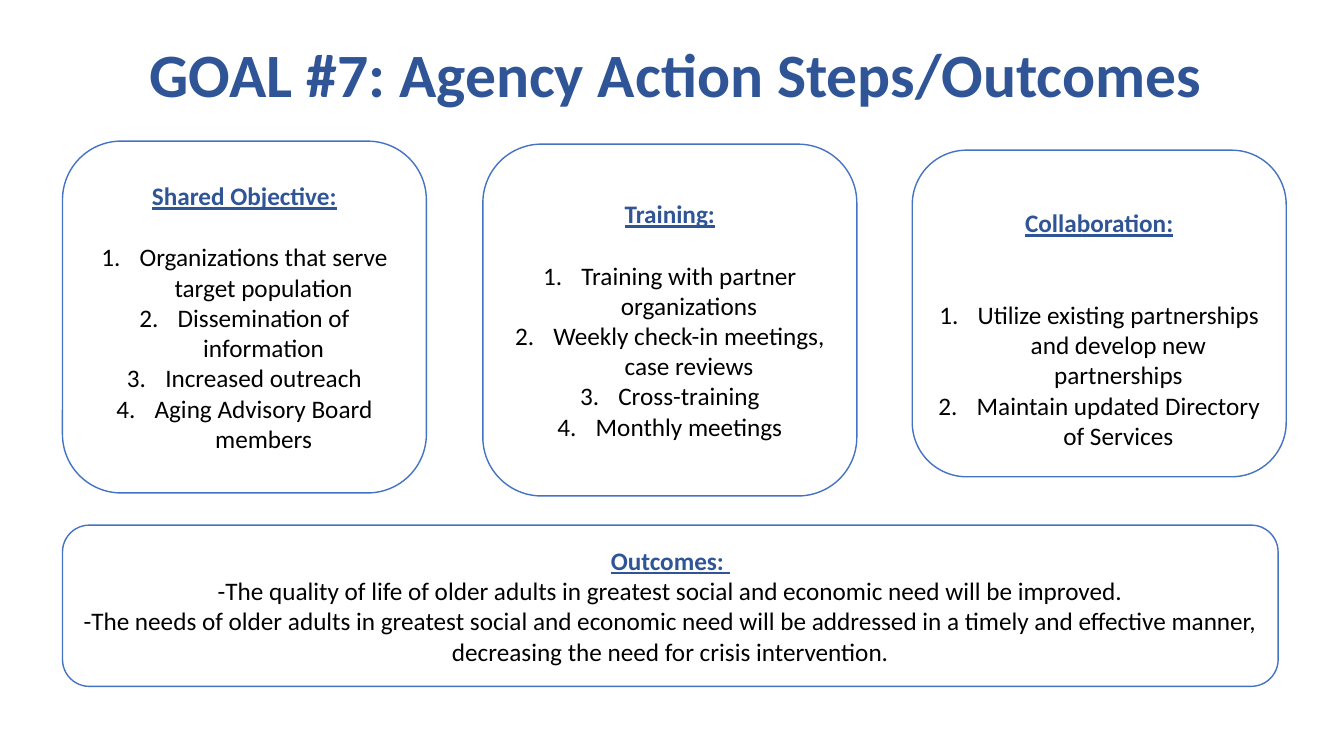
"""Build the Goal #7 slide: a title, three action cards and an outcomes panel."""
from lxml import etree
from pptx import Presentation
from pptx import util as u
from pptx.dml.color import RGBColor
from pptx.enum import shapes, text
from pptx.oxml.ns import qn

NAVY, BLUE, BLACK, WHITE = "2F5597", "4472C4", "000000", "FFFFFF"
COLUMNS, ROWS = 80, 45
LINE = 22
HEADING = {"size": u.Pt(18), "bold": True, "underline": True}
BODY = {"size": u.Pt(18), "bold": False, "underline": False}
TITLE = {"size": u.Pt(44), "bold": True}


def color(value):
    return RGBColor.from_string(value)


def write(para, words, style, ink):
    para.alignment = text.PP_ALIGN.CENTER
    span = para.add_run()
    span.text = words
    for name, value in {"name": "Calibri", **style}.items():
        setattr(span.font, name, value)
    span.font.color.rgb = color(ink)


deck = Presentation()
deck.slide_width, deck.slide_height = u.Inches(13.33), u.Inches(7.5)
column, row = deck.slide_width / COLUMNS, deck.slide_height / ROWS
page = deck.slides.add_slide(deck.slide_layouts[6])

title = page.shapes.add_textbox(*(round(n) for n in (3.78 * column, 0, 73.74 * column, 9.18 * row)))
title.text_frame.word_wrap = True
title.text_frame.vertical_anchor = text.MSO_ANCHOR.MIDDLE
title.text_frame.paragraphs[0].line_spacing = 0.9
write(title.text_frame.paragraphs[0], "GOAL #7: Agency Action Steps/Outcomes ", TITLE, NAVY)

panels = [
    {"heading": "Shared Objective:", "area": (3.72, 8.4, 21.66, 20.94), "gap": 1, "drop": 0, "numbered": True,
     "items": ["Organizations that serve target population", "Dissemination of information",
               "Increased outreach", "Aging Advisory Board members"]},
    {"heading": "Training:", "area": (28.74, 8.58, 22.26, 20.94), "gap": 1, "drop": 0, "numbered": True,
     "items": ["Training with partner organizations", "Weekly check-in meetings, case reviews",
               "Cross-training", "Monthly meetings"]},
    {"heading": "Collaboration:", "area": (54.3, 8.94, 22.26, 19.44), "gap": 2, "drop": 1, "numbered": True,
     "items": ["Utilize existing partnerships and develop new partnerships",
               "Maintain updated Directory of Services"]},
    {"heading": "Outcomes: ", "area": (3.72, 31.26, 72.36, 9.6), "gap": 0, "drop": 0, "numbered": False,
     "items": ["-The quality of life of older adults in greatest social and economic need will be improved.",
               "-The needs of older adults in greatest social and economic need will be addressed in a timely "
               "and effective manner, decreasing the need for crisis intervention."]},
]

for panel in panels:
    left, top, width, height = panel["area"]
    box = page.shapes.add_shape(
        shapes.MSO_SHAPE.ROUNDED_RECTANGLE,
        round(left * column), round(top * row), round(width * column), round(height * row))
    box.shadow.inherit = False
    box.fill.solid()
    box.fill.fore_color.rgb = color(WHITE)
    box.line.color.rgb = color(BLUE)
    box.line.width = u.Pt(1)

    frame = box.text_frame
    frame.word_wrap = True
    frame.vertical_anchor = text.MSO_ANCHOR.MIDDLE
    frame.margin_top = u.Inches(0.05) + u.Pt(panel["drop"] * LINE)
    heading = frame.paragraphs[0]
    heading.space_after = u.Pt(panel["gap"] * LINE)
    write(heading, panel["heading"], HEADING, NAVY)

    for item in panel["items"]:
        para = frame.add_paragraph()
        if panel["numbered"]:
            layout = para._p.get_or_add_pPr()
            indent = u.Inches(0.38)
            layout.set("marL", str(indent))
            layout.set("indent", str(-indent))
            etree.SubElement(layout, qn("a:buFont"), typeface="+mj-lt")
            etree.SubElement(layout, qn("a:buAutoNum"), type="arabicPeriod")
        write(para, item, BODY, BLACK)

deck.save("out.pptx")
